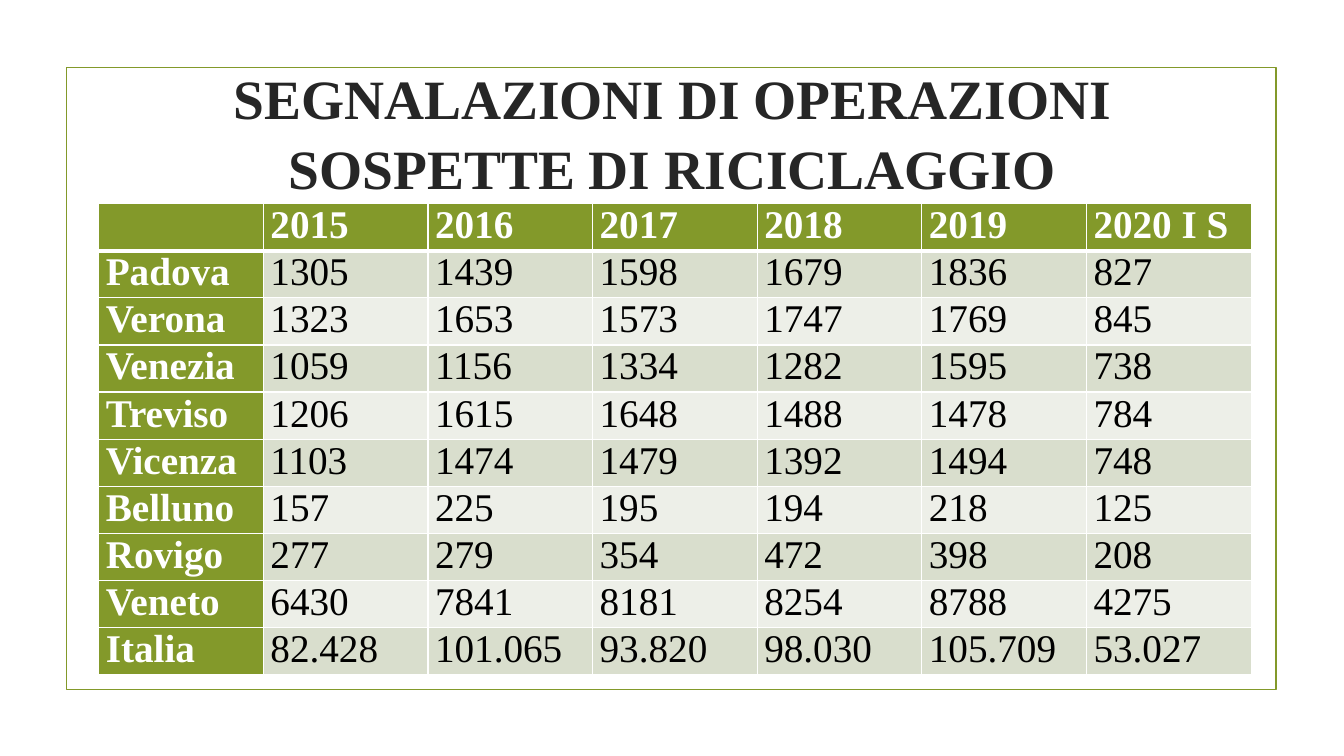
from dataclasses import dataclass
from lxml.etree import SubElement
from pptx import Presentation
from pptx.dml.color import RGBColor
from pptx.enum.shapes import MSO_SHAPE
from pptx.enum.text import MSO_ANCHOR, PP_ALIGN
from pptx.oxml.ns import qn
from pptx.util import Inches, Pt

# Content
TITLE = "SEGNALAZIONI DI OPERAZIONI SOSPETTE DI RICICLAGGIO"
ROWS = [
    ("", "2015", "2016", "2017", "2018", "2019", "2020 I S"),
    ("Padova", "1305", "1439", "1598", "1679", "1836", "827"),
    ("Verona", "1323", "1653", "1573", "1747", "1769", "845"),
    ("Venezia", "1059", "1156", "1334", "1282", "1595", "738"),
    ("Treviso", "1206", "1615", "1648", "1488", "1478", "784"),
    ("Vicenza", "1103", "1474", "1479", "1392", "1494", "748"),
    ("Belluno", "157", "225", "195", "194", "218", "125"),
    ("Rovigo", "277", "279", "354", "472", "398", "208"),
    ("Veneto", "6430", "7841", "8181", "8254", "8788", "4275"),
    ("Italia", "82.428", "101.065", "93.820", "98.030", "105.709", "53.027"),
]


@dataclass(frozen=True)
class Theme:
    font: str = "Times New Roman"
    green: str = "83992A"
    bands: tuple = ("EDEFE8", "D9DECD")
    white: str = "FFFFFF"
    black: str = "000000"
    title_color: str = "262626"
    title_size: float = 39.6
    cell_size: float = 28


THEME = Theme()

# Layout in inches
SLIDE_WIDTH, SLIDE_HEIGHT = 13.33, 7.5
FRAME = (0.66, 0.67, 12, 6.17)
TITLE_BOX = (1.42, 0.71, 10.5, 1.17)
TABLE_LEFT, TABLE_TOP, TABLE_WIDTH, ROW_HEIGHT = 0.98, 2.02, 11.43, 0.46
CELL_MARGIN = 0.07


def inches(lengths):
    return [Inches(length) for length in lengths]


def style_text(paragraph, size, color, bold):
    font = paragraph.font
    font.name, font.size, font.bold = THEME.font, Pt(size), bold
    font.color.rgb = RGBColor.from_string(color)


def set_borders(cell, bottom_width, top_width):
    properties = cell._tc.get_or_add_tcPr()
    widths = {"a:lnL": 1, "a:lnR": 1, "a:lnT": top_width, "a:lnB": bottom_width}
    for tag, width in widths.items():
        line = SubElement(properties, qn(tag), w=str(Pt(width)))
        fill = SubElement(line, qn("a:solidFill"))
        SubElement(fill, qn("a:srgbClr"), val=THEME.white)


def add_frame(page):
    frame = page.shapes.add_shape(MSO_SHAPE.RECTANGLE, *inches(FRAME))
    frame.shadow.inherit = False
    frame.fill.background()
    frame.line.color.rgb = RGBColor.from_string(THEME.green)
    frame.line.width = Pt(1.25)


def add_title(page):
    text = page.shapes.add_textbox(*inches(TITLE_BOX)).text_frame
    text.word_wrap = True
    text.vertical_anchor = MSO_ANCHOR.MIDDLE
    text.margin_top = text.margin_bottom = 0
    para = text.paragraphs[0]
    para.text = TITLE
    para.alignment = PP_ALIGN.CENTER
    para.line_spacing = 1.05
    style_text(para, THEME.title_size, THEME.title_color, True)


def add_figures(page):
    box = (TABLE_LEFT, TABLE_TOP, TABLE_WIDTH, ROW_HEIGHT * len(ROWS))
    table = page.shapes.add_table(len(ROWS), len(ROWS[0]), *inches(box)).table
    table.first_col = True
    for column in table.columns:
        column.width = Inches(TABLE_WIDTH / len(ROWS[0]))
    for row_index, row in enumerate(ROWS):
        table.rows[row_index].height = Inches(ROW_HEIGHT)
        for column_index, value in enumerate(row):
            cell = table.cell(row_index, column_index)
            heading = row_index == 0 or column_index == 0
            cell.margin_left = cell.margin_right = Inches(CELL_MARGIN)
            cell.margin_top = cell.margin_bottom = 0
            # Borders come before the fill in the cell's XML
            set_borders(cell, 3 if row_index == 0 else 1, 3 if row_index == 1 else 1)
            cell.fill.solid()
            color = THEME.green if heading else THEME.bands[row_index % 2]
            cell.fill.fore_color.rgb = RGBColor.from_string(color)
            para = cell.text_frame.paragraphs[0]
            para.text = value
            style_text(para, THEME.cell_size, THEME.white if heading else THEME.black, heading)


def main():
    deck = Presentation()
    deck.slide_width, deck.slide_height = inches((SLIDE_WIDTH, SLIDE_HEIGHT))
    page = deck.slides.add_slide(deck.slide_layouts[6])
    add_frame(page)
    add_title(page)
    add_figures(page)
    deck.save("out.pptx")


if __name__ == "__main__":
    main()
